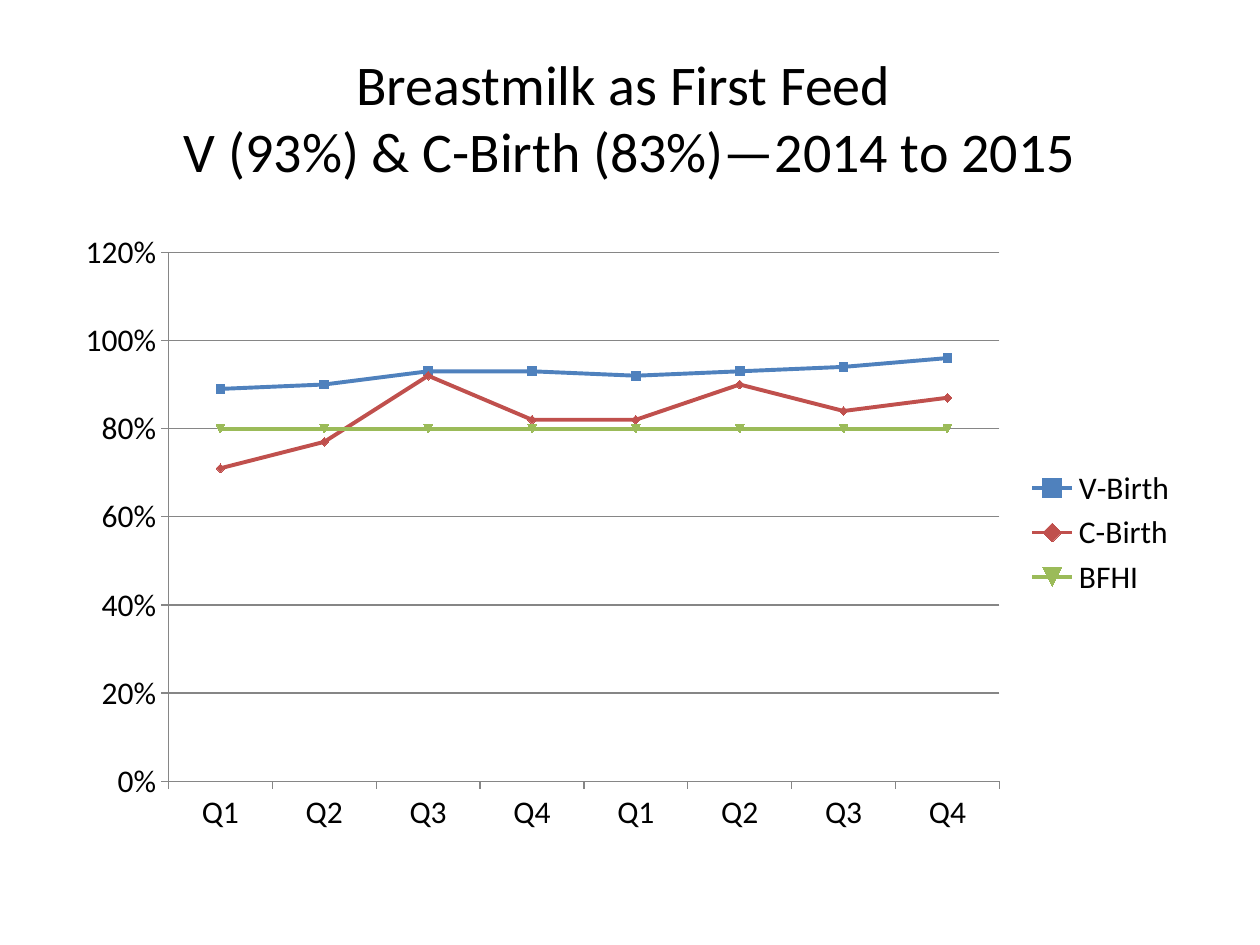
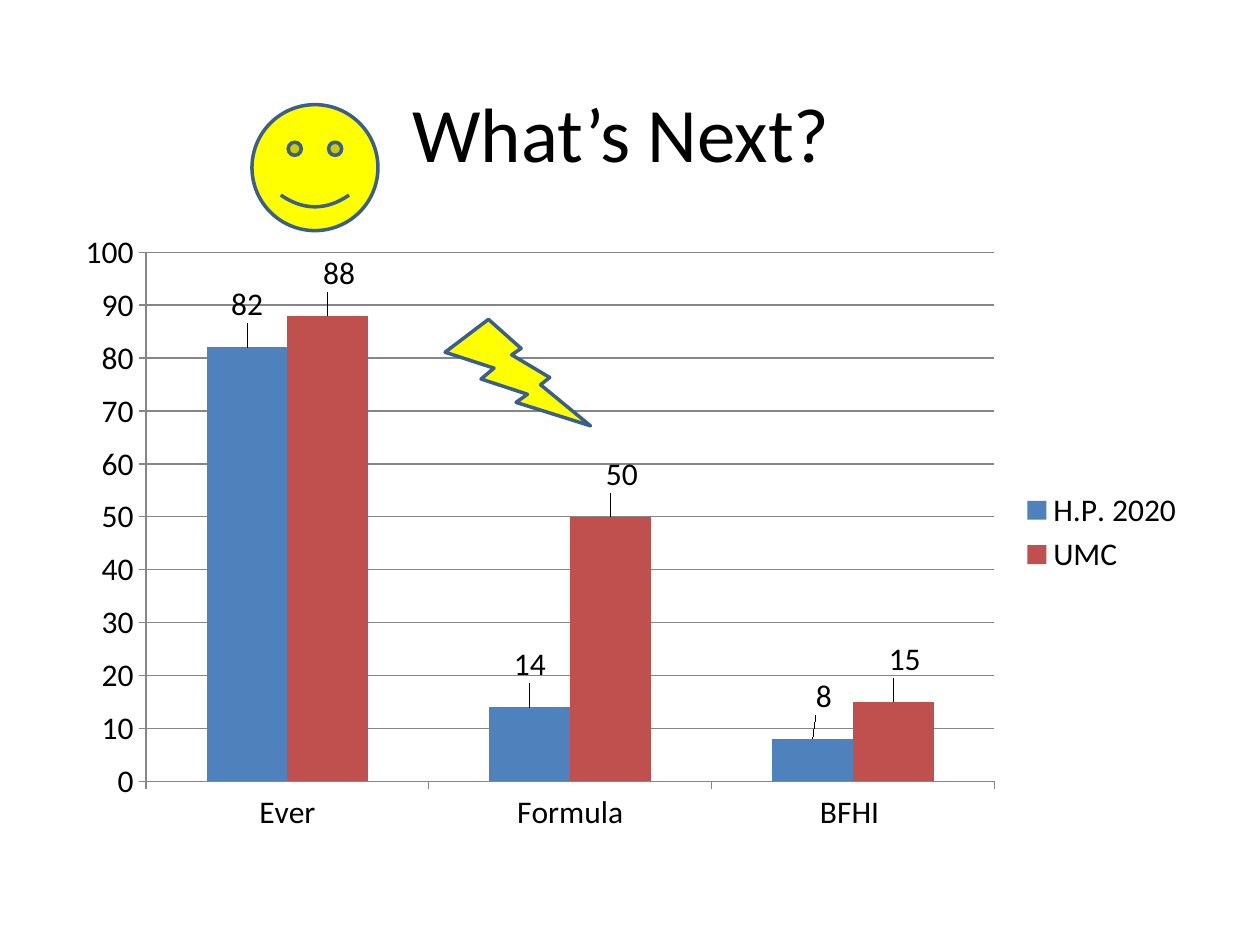
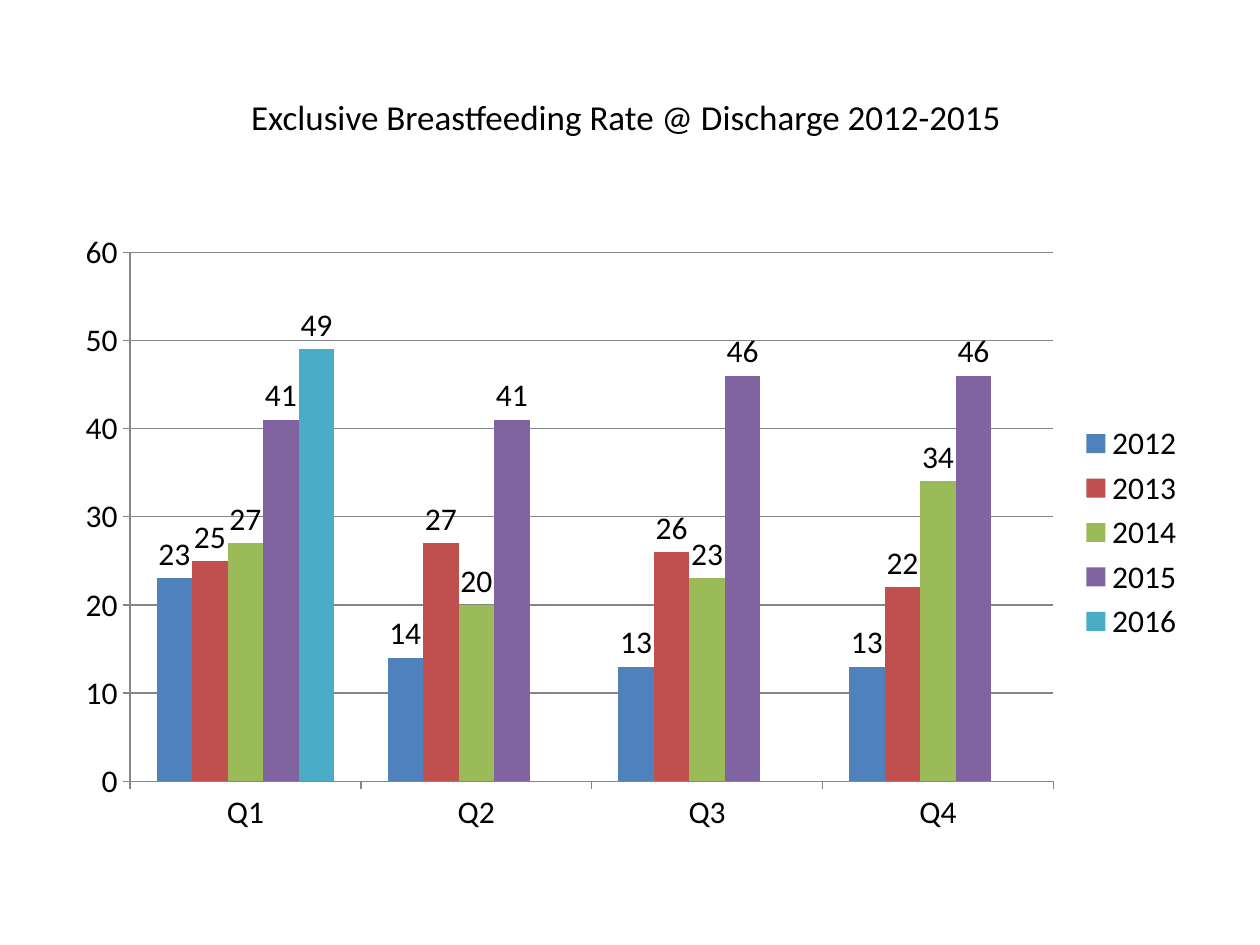
from lxml.etree import SubElement
from pptx import Presentation
from pptx.chart.data import CategoryChartData
from pptx.dml.color import RGBColor
from pptx.enum.chart import XL_CHART_TYPE, XL_LABEL_POSITION, XL_LEGEND_POSITION, XL_TICK_MARK
from pptx.enum.shapes import MSO_SHAPE
from pptx.enum.text import MSO_ANCHOR, PP_ALIGN
from pptx.oxml.ns import qn
from pptx.util import Cm, Pt

FONT = "Calibri"
BLACK, GRAY, YELLOW, OUTLINE = "000000", "868686", "FFFF00", "3A5F8C"
SERIES_COLORS = ["4F81BD", "C0504D", "9BBB59", "8064A2", "4BACC6"]
LEFT, WIDTH = Cm(1.27), Cm(22.86)
QUARTERS = ["Q1", "Q2", "Q3", "Q4"]


def color(hex_string):
    return RGBColor.from_string(hex_string)


def set_format(target, values):
    for name, value in values.items():
        setattr(target, name, value)


slides = [
    {
        "title": "Breastmilk as First Feed \vV (93%) & C-Birth (83%)—2014 to 2015",
        "title_top": 0.76,
        "title_size": 32,
        "type": XL_CHART_TYPE.LINE_MARKERS,
        "categories": QUARTERS * 2,
        "scale": {"minimum_scale": 0, "maximum_scale": 1.2, "major_unit": 0.2},
        "number_format": "0%",
        "series": {
            "V-Birth ": [0.89, 0.9, 0.93, 0.93, 0.92, 0.93, 0.94, 0.96],
            "C-Birth": [0.71, 0.77, 0.92, 0.82, 0.82, 0.9, 0.84, 0.87],
            "BFHI ": [0.8] * 8,
        },
    },
    {
        "title": "What’s Next? ",
        "title_top": 1.07,
        "title_size": 44,
        "type": XL_CHART_TYPE.COLUMN_CLUSTERED,
        "categories": ["Ever", "Formula", "BFHI "],
        "scale": {"minimum_scale": 0, "maximum_scale": 100, "major_unit": 10},
        "number_format": "General",
        "series": {"H.P. 2020": [82, 14, 8], "UMC": [88, 50, 15]},
        "label_shifts": [[0, 0, 0.01], [0.01, 0.01, 0.01]],
        "symbols": [
            (MSO_SHAPE.LIGHTNING_BOLT, 9.12, 6.35, 347.5),
            (MSO_SHAPE.SMILEY_FACE, 5.08, 2.11, 0),
        ],
    },
    {
        "title": "Exclusive Breastfeeding Rate @ Discharge 2012-2015 ",
        "title_top": 0.76,
        "title_size": 20,
        "type": XL_CHART_TYPE.COLUMN_CLUSTERED,
        "categories": QUARTERS,
        "scale": {"minimum_scale": 0, "maximum_scale": 60, "major_unit": 10},
        "number_format": "General",
        "series": {
            "2012": [23, 14, 13, 13],
            "2013": [25, 27, 26, 22],
            "2014": [27, 20, 23, 34],
            "2015": [41, 41, 46, 46],
            "2016": [49, None, None, None],
        },
    },
]

presentation = Presentation()
set_format(presentation, {"slide_width": Cm(25.4), "slide_height": Cm(19.05)})

for content in slides:
    slide = presentation.slides.add_slide(presentation.slide_layouts[6])

    title = slide.shapes.add_textbox(LEFT, Cm(content["title_top"]), WIDTH, Cm(3.18))
    text_frame = title.text_frame
    set_format(text_frame, {"word_wrap": True, "vertical_anchor": MSO_ANCHOR.MIDDLE})
    paragraph = text_frame.paragraphs[0]
    set_format(paragraph, {"text": content["title"], "alignment": PP_ALIGN.CENTER})
    for run in paragraph.runs:
        set_format(run.font, {"name": FONT, "size": Pt(content["title_size"])})
        run.font.color.rgb = color(BLACK)

    chart_data = CategoryChartData(number_format=content["number_format"])
    chart_data.categories = content["categories"]
    for name, values in content["series"].items():
        chart_data.add_series(name, values)
    chart = slide.shapes.add_chart(
        content["type"], LEFT, Cm(4.45), WIDTH, Cm(12.57), chart_data
    ).chart
    set_format(chart, {"has_title": False, "has_legend": True})
    set_format(chart.font, {"name": FONT, "size": Pt(18)})
    chart.font.color.rgb = color(BLACK)
    set_format(
        chart.legend,
        {"position": XL_LEGEND_POSITION.RIGHT, "include_in_layout": False},
    )

    value_axis = chart.value_axis
    set_format(value_axis, content["scale"])
    value_axis.has_major_gridlines = True
    set_format(
        value_axis.tick_labels,
        {"number_format": content["number_format"], "number_format_is_linked": False},
    )
    for axis in (chart.category_axis, value_axis):
        set_format(
            axis,
            {"major_tick_mark": XL_TICK_MARK.OUTSIDE, "minor_tick_mark": XL_TICK_MARK.NONE},
        )
    for part in (chart.category_axis, value_axis, value_axis.major_gridlines):
        part.format.line.width = Pt(0.75)
        part.format.line.color.rgb = color(GRAY)

    plot = chart.plots[0]
    plot.vary_by_categories = False
    is_line = content["type"] == XL_CHART_TYPE.LINE_MARKERS
    if not is_line:
        set_format(plot, {"gap_width": 150, "overlap": 0})

    for series, series_color in zip(plot.series, SERIES_COLORS):
        if is_line:
            series.smooth = False
            series.format.line.width = Pt(2.25)
            series.format.line.color.rgb = color(series_color)
            continue
        series.format.fill.solid()
        series.format.fill.fore_color.rgb = color(series_color)
        set_format(
            series.data_labels,
            {"show_value": True, "position": XL_LABEL_POSITION.OUTSIDE_END},
        )

    for series, shifts in zip(plot.series, content.get("label_shifts", [])):
        for index, shift in enumerate(shifts):
            series.points[index].data_label.position = XL_LABEL_POSITION.OUTSIDE_END
        labels = series.data_labels._element.findall(qn("c:dLbl"))
        for label, shift in zip(labels, shifts):
            layout = SubElement(label, qn("c:layout"))
            label.insert(1, layout)
            manual_layout = SubElement(layout, qn("c:manualLayout"))
            for axis_name, offset in (("x", shift), ("y", -0.03)):
                SubElement(manual_layout, qn(f"c:{axis_name}"), val=str(offset))

    for preset, left, top, rotation in content.get("symbols", []):
        shape = slide.shapes.add_shape(preset, Cm(left), Cm(top), Cm(2.54), Cm(2.54))
        shape.rotation = rotation
        shape.shadow.inherit = False
        shape.fill.solid()
        shape.fill.fore_color.rgb = color(YELLOW)
        shape.line.width = Pt(2)
        shape.line.color.rgb = color(OUTLINE)

presentation.save("out.pptx")
